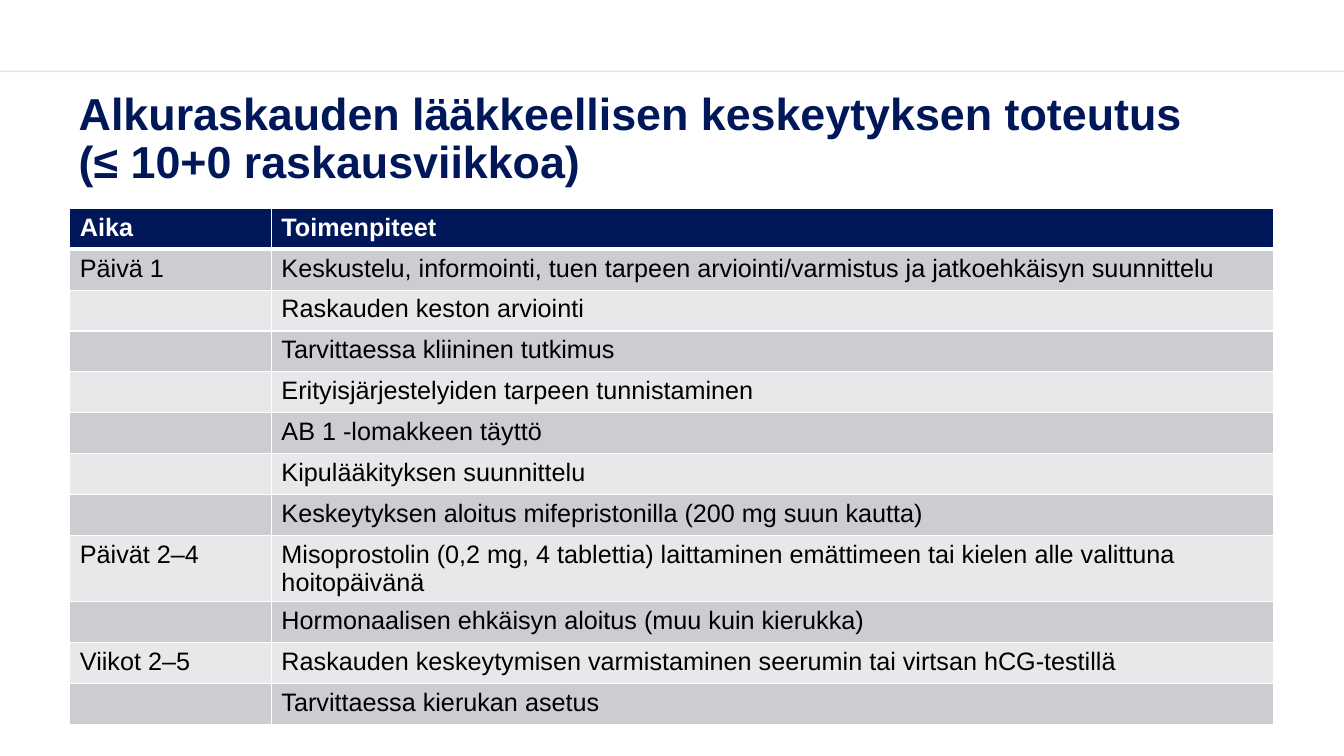
"""Build the slide on the steps of early medical abortion."""
from pptx import Presentation
from pptx.dml.color import RGBColor as RGB
from pptx.enum.shapes import MSO_CONNECTOR as CONN
from pptx.enum.text import MSO_ANCHOR as ANCHOR, MSO_AUTO_SIZE as AUTO, PP_ALIGN as ALIGN
from pptx.oxml.ns import qn
from pptx.util import Cm, Pt
from lxml.etree import SubElement

NAVY = RGB(0x00, 0x17, 0x59)
WHITE = RGB(0xFF, 0xFF, 0xFF)
BLACK = RGB(0x00, 0x00, 0x00)
BANDS = (RGB(0xE7, 0xE8, 0xEA), RGB(0xCC, 0xCC, 0xD1))
FONT = "Arial"
WIDTH, HEIGHT = Cm(33.87), Cm(19.05)

TITLE = ("Alkuraskauden lääkkeellisen keskeytyksen toteutus ", "(≤ 10+0 raskausviikkoa)")
ROWS = (
    ("Aika", "Toimenpiteet"),
    ("Päivä 1", "Keskustelu, informointi, tuen tarpeen arviointi/varmistus ja jatkoehkäisyn suunnittelu"),
    ("", "Raskauden keston arviointi "),
    ("", "Tarvittaessa kliininen tutkimus"),
    ("", "Erityisjärjestelyiden tarpeen tunnistaminen"),
    ("", "AB 1 -lomakkeen täyttö"),
    ("", "Kipulääkityksen suunnittelu"),
    ("", "Keskeytyksen aloitus mifepristonilla (200 mg suun kautta)"),
    ("Päivät 2–4", "Misoprostolin (0,2 mg, 4 tablettia) laittaminen emättimeen tai kielen alle "
     "valittuna hoitopäivänä"),
    ("", "Hormonaalisen ehkäisyn aloitus (muu kuin kierukka)"),
    ("Viikot 2–5", "Raskauden keskeytymisen varmistaminen seerumin tai virtsan hCG-testillä"),
    ("", "Tarvittaessa kierukan asetus"),
)


def add_run(p, text, size, color, bold):
    """Append one formatted run to a paragraph."""
    r = p.add_run()
    r.text = text
    r.font.name, r.font.size, r.font.bold = FONT, Pt(size), bold
    r.font.color.rgb = color


def add_rule(s, y):
    """Draw a thin, mostly transparent line across the slide."""
    line = s.shapes.add_connector(CONN.STRAIGHT, 0, y, WIDTH, y)
    line.line.color.rgb, line.line.width = BLACK, Pt(1)
    sp_pr = line._element.spPr
    SubElement(sp_pr.find(".//" + qn("a:srgbClr")), qn("a:alpha"), val="10000")
    SubElement(sp_pr, qn("a:effectLst"))


def set_title(s, lines):
    """Place the title and fill in its lines."""
    sp = s.shapes.title
    sp.left, sp.top, sp.width, sp.height = Cm(1.73), Cm(2.37), Cm(30.33), Cm(2.31)
    tf = sp.text_frame
    tf.word_wrap, tf.auto_size, tf.vertical_anchor = True, AUTO.NONE, ANCHOR.MIDDLE
    p = tf.paragraphs[0]
    p.alignment, p.line_spacing = ALIGN.LEFT, 0.9
    for i, text in enumerate(lines):
        if i:
            p.add_line_break()
        add_run(p, text, 32, NAVY, True)


def set_borders(cell, top, bottom):
    """Give a cell white borders with the given top and bottom widths."""
    tc_pr = cell._tc.get_or_add_tcPr()
    for side, width in (("L", 1), ("R", 1), ("T", top), ("B", bottom)):
        ln = SubElement(tc_pr, qn(f"a:ln{side}"), w=str(Pt(width)))
        fill = SubElement(ln, qn("a:solidFill"))
        SubElement(fill, qn("a:srgbClr"), val=str(WHITE))


def add_steps(s, rows):
    """Add the table of times and actions."""
    row_h = Cm(1.03)
    frame = s.shapes.add_table(len(rows), 2, Cm(1.76), Cm(5.25), Cm(30.34), row_h * len(rows))
    table = frame.table
    table.horz_banding = False
    table.columns[0].width, table.columns[1].width = Cm(5.08), Cm(25.26)
    for i, texts in enumerate(rows):
        head = i == 0
        table.rows[i].height = row_h
        for j, text in enumerate(texts):
            cell = table.cell(i, j)
            set_borders(cell, 3 if i == 1 else 1, 3 if head else 1)
            cell.fill.solid()
            cell.fill.fore_color.rgb = NAVY if head else BANDS[i % 2]
            if text:
                add_run(cell.text_frame.paragraphs[0], text, 18, WHITE if head else BLACK, head)


def main():
    """Create and save the presentation."""
    prs = Presentation()
    prs.slide_width, prs.slide_height = WIDTH, HEIGHT
    s = prs.slides.add_slide(prs.slide_layouts[5])
    add_rule(s, Cm(1.8))
    set_title(s, TITLE)
    add_steps(s, ROWS)
    prs.save("out.pptx")


if __name__ == "__main__":
    main()
